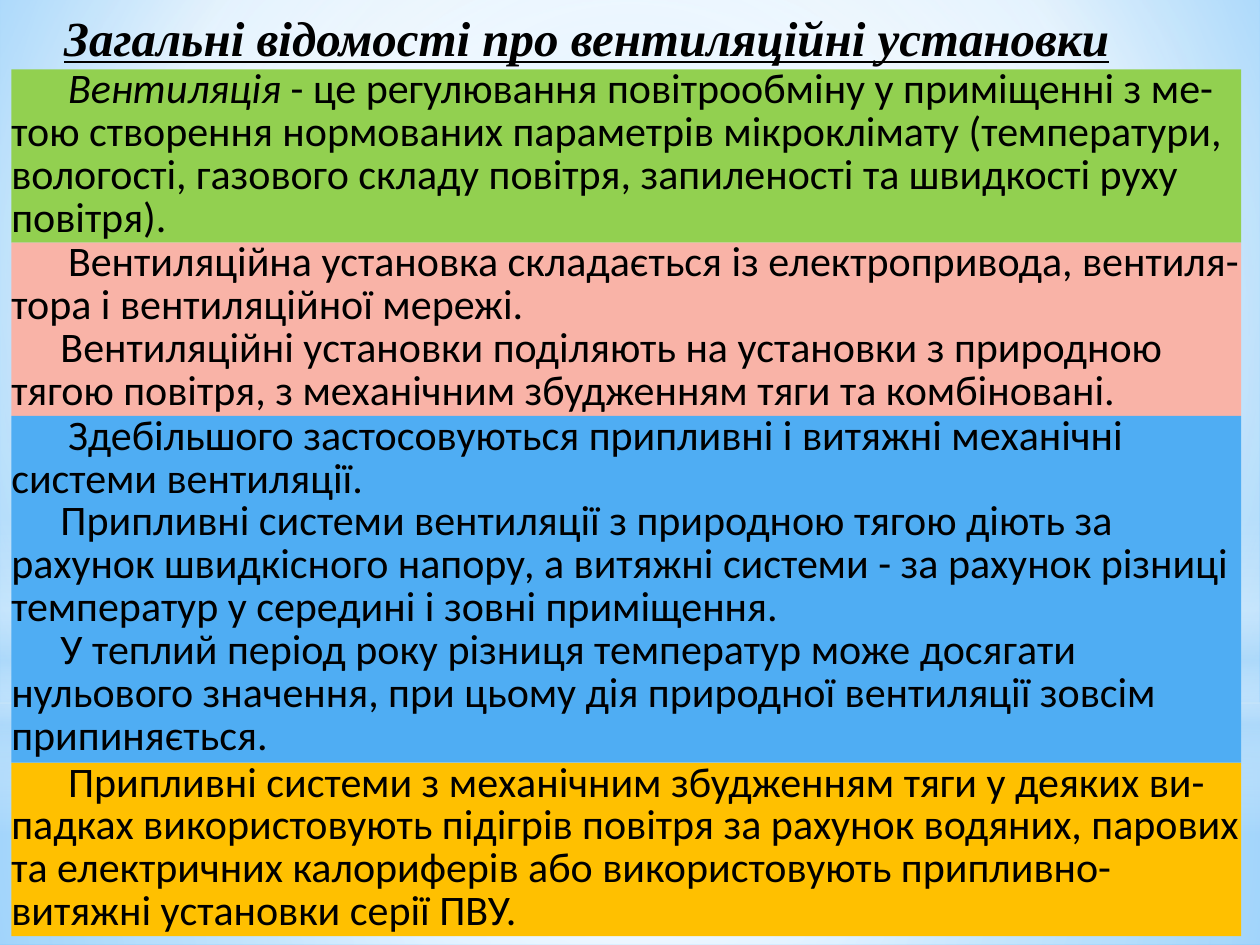
from pptx import Presentation
from pptx.dml.color import RGBColor
from pptx.enum.shapes import MSO_SHAPE as Form
from pptx.enum.text import MSO_ANCHOR as Anchor, MSO_AUTO_SIZE as Auto, PP_ALIGN as Align
from pptx.oxml import parse_xml
from pptx.oxml.ns import nsdecls, qn
from pptx.util import Inches, Pt

BLACK = RGBColor(0x00, 0x00, 0x00)
WHITE = RGBColor(0xFF, 0xFF, 0xFF)
PALE = RGBColor(0xB4, 0xDC, 0xFA)
SKY = RGBColor(0x9E, 0xD5, 0xFF)
DEEP = RGBColor(0x5B, 0xB9, 0xFF)
GREEN = RGBColor(0x92, 0xD0, 0x50)
PINK = RGBColor(0xF9, 0xB3, 0xA7)
BLUE = RGBColor(0x4F, 0xAD, 0xF3)
GOLD = RGBColor(0xFF, 0xC0, 0x00)

FRAME = {"margin_left": 0, "margin_top": 0, "margin_right": 0, "margin_bottom": 0,
         "vertical_anchor": Anchor.TOP, "auto_size": Auto.SHAPE_TO_FIT_TEXT}
HEAD = {"name": "Times New Roman", "size": Pt(28), "bold": True, "italic": True,
        "underline": True}
BODY = {"name": "Calibri", "size": Pt(24), "bold": False}
MID = (50, 50, 50, 50)


def shade(fill, host, stops, focus):
    """Give host a gradient: round about focus, or downward without one."""
    fill.solid()
    marks = "".join(
        f'<a:gs pos="{pos * 1000}"><a:srgbClr val="{tint}">'
        f'<a:alpha val="{alpha * 1000}"/></a:srgbClr></a:gs>'
        for pos, tint, alpha in stops)
    if focus:
        left, top, right, low = (side * 1000 for side in focus)
        way = (f'<a:path path="circle"><a:fillToRect l="{left}" t="{top}" '
               f'r="{right}" b="{low}"/></a:path>')
    else:
        way = '<a:lin ang="5400000" scaled="0"/>'
    grad = parse_xml(f'<a:gradFill {nsdecls("a")} rotWithShape="1">'
                     f'<a:gsLst>{marks}</a:gsLst>{way}</a:gradFill>')
    host.replace(host.find(qn("a:solidFill")), grad)


def write(par, text, style):
    """Add a black run in the given style."""
    run = par.add_run()
    run.text = text
    for key, val in style.items():
        setattr(run.font, key, val)
    run.font.color.rgb = BLACK


deck = Presentation()
deck.slide_width, deck.slide_height = Inches(10), Inches(7.5)
slide = deck.slides.add_slide(deck.slide_layouts[6])

# Background
back = slide.background.fill
back.solid()
shade(back, slide.element.find(".//" + qn("p:bgPr")),
      [(0, SKY, 100), (60, WHITE, 100), (100, DEEP, 100)], (20, 10, 20, 60))

# Soft light layers: form, top, height, stops, focus
layers = [
    (Form.RECTANGLE, 5.58, 1.92, [(0, WHITE, 91), (37, WHITE, 76), (100, PALE, 79)], MID),
    (Form.RECTANGLE, 0, 5.58, [(0, WHITE, 89), (48, WHITE, 62), (100, PALE, 79)], MID),
    (Form.RECTANGLE, 4.12, 2.5, [(0, WHITE, 0), (29, WHITE, 30), (45, PALE, 40),
                                 (55, WHITE, 26), (65, PALE, 60), (100, WHITE, 0)], None),
    (Form.OVAL, 1.75, 5.58, [(0, WHITE, 100), (56, WHITE, 0)], MID),
]
for form, top, height, stops, focus in layers:
    layer = slide.shapes.add_shape(form, 0, Inches(top), Inches(10), Inches(height))
    layer.shadow.inherit = False
    layer.line.fill.background()
    shade(layer.fill, layer.element.spPr, stops, focus)

# Title
title = slide.shapes.add_textbox(Inches(0.51), Inches(0.06), Inches(8.38), Inches(0.47))
for key, val in FRAME.items():
    setattr(title.text_frame, key, val)
title.text_frame.word_wrap = False
write(title.text_frame.paragraphs[0], "Загальні відомості про вентиляційні установки", HEAD)

# Stacked blocks: fill, count of text lines, paragraphs made of (text, italic) runs
blocks = [
    (GREEN, 4, [
        [("Вентиляція", True),
         (" - це регулювання повітрообміну у приміщенні з ме-тою створення нормованих "
          "параметрів мікроклімату (температури, вологості, газового складу повітря, "
          "запиленості та швидкості руху повітря).", False)]]),
    (PINK, 4, [
        [("Вентиляційна установка складається із електропривода, вентиля-тора "
          "і вентиляційної мережі.", False)],
        [("Вентиляційні установки поділяють на установки з природною тягою повітря, "
          "з механічним збудженням тяги та комбіновані.", False)]]),
    (BLUE, 8, [
        [("Здебільшого застосовуються припливні і витяжні механічні системи "
          "вентиляції.", False)],
        [("Припливні системи вентиляції з природною тягою діють за рахунок швидкісного "
          "напору, а витяжні системи - за рахунок різниці температур у середині і зовні "
          "приміщення.", False)],
        [("У теплий період року різниця температур може досягати нульового значення, "
          "при цьому дія природної вентиляції зовсім припиняється.", False)]]),
    (GOLD, 4, [
        [("Припливні системи з механічним збудженням тяги у деяких ви-падках "
          "використовують підігрів повітря за рахунок водяних, парових та електричних "
          "калориферів або використовують припливно-витяжні установки серії ПВУ.", False)]]),
]
top = Inches(0.55)
for tint, lines, pars in blocks:
    height = Inches(6.88 * lines / 20)
    block = slide.shapes.add_shape(Form.RECTANGLE, Inches(0.09), top, Inches(9.76), height)
    block.shadow.inherit = False
    block.line.fill.background()
    block.fill.solid()
    block.fill.fore_color.rgb = tint
    frame = block.text_frame
    for key, val in FRAME.items():
        setattr(frame, key, val)
    frame.word_wrap = True
    for num, runs in enumerate(pars):
        par = frame.add_paragraph() if num else frame.paragraphs[0]
        par.alignment = Align.LEFT
        par.line_spacing = 0.85
        indent = Inches(0.39 if num else 0.45)
        par._p.get_or_add_pPr().set("indent", str(indent))
        for text, slant in runs:
            write(par, text, {**BODY, "italic": slant})
    top += height

deck.save("out.pptx")
